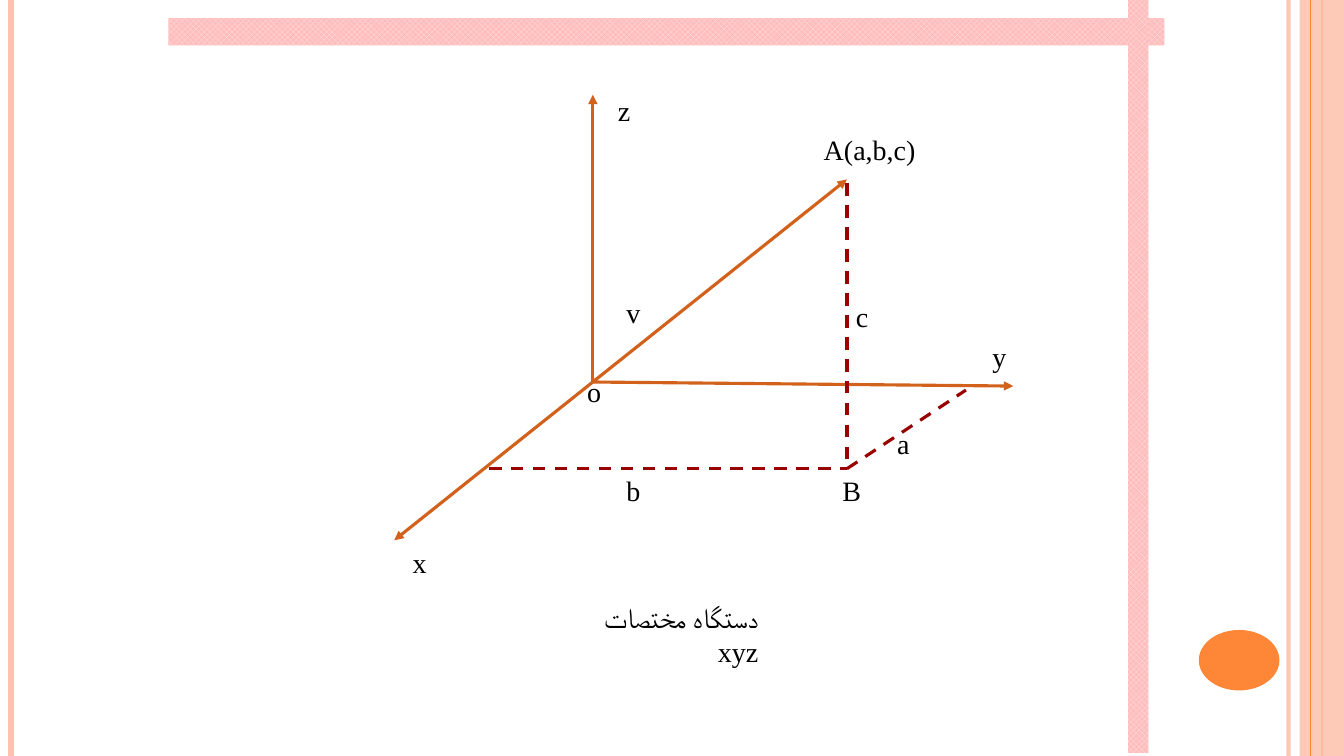
from lxml.etree import SubElement
from pptx import Presentation
from pptx.dml.color import RGBColor
from pptx.enum.dml import MSO_LINE, MSO_PATTERN
from pptx.enum.shapes import MSO_CONNECTOR, MSO_SHAPE
from pptx.enum.text import MSO_AUTO_SIZE, PP_ALIGN
from pptx.oxml.ns import qn
from pptx.util import Inches, Pt

PEACH = RGBColor(0xFE, 0xC3, 0xAE)
ORANGE = RGBColor(0xFE, 0x86, 0x37)
RUST = RGBColor(0xD2, 0x61, 0x1C)
MAROON = RGBColor(0x99, 0x00, 0x00)
BLACK = RGBColor(0, 0, 0)
PALE = RGBColor(0xFF, 0xE7, 0xE7)
PINK = RGBColor(0xFF, 0xBD, 0xBD)

WIDE, HIGH = 13.33, 7.5
ORIGIN = (5.88, 3.79)
POINT_A = (8.4, 1.78)
POINT_B = (8.4, 4.65)


def fade(fill, share):
    """Make a solid fill opaque to the given percentage."""
    color = next(fill.iter(qn("a:srgbClr")))
    SubElement(color, qn("a:alpha")).set("val", str(share * 1000))


class Canvas:
    """Style and current slide."""

    font = "Times New Roman"
    size = Pt(20)

    def __init__(self, slide):
        self.shapes = slide.shapes

    def line(self, start, end, color, width=2.25, dash=None, tips=(), share=100):
        """Draw a line; tips names its arrow ends, headEnd before tailEnd."""
        spots = [Inches(n) for n in (*start, *end)]
        link = self.shapes.add_connector(MSO_CONNECTOR.STRAIGHT, *spots)
        link.line.color.rgb = color
        link.line.width = Pt(width)
        if dash:
            link.line.dash_style = dash
        props = link._element.spPr
        edge = props.find(qn("a:ln"))
        for tip in tips:
            SubElement(edge, qn("a:" + tip)).set("type", "triangle")
        if share < 100:
            fade(edge, share)
        SubElement(props, qn("a:effectLst"))

    def shape(self, kind, box, color=None, share=100):
        """Draw a borderless shape, checked in pink when no color is given."""
        item = self.shapes.add_shape(kind, *[Inches(n) for n in box])
        item.shadow.inherit = False
        item.line.fill.background()
        if color is None:
            item.fill.patterned()
            item.fill.pattern = MSO_PATTERN.LARGE_CHECKER_BOARD
            item.fill.fore_color.rgb = PALE
            item.fill.back_color.rgb = PINK
        else:
            item.fill.solid()
            item.fill.fore_color.rgb = color
        if share < 100:
            fade(item._element.spPr, share)

    def text(self, words, left, top, width, wrap=False):
        """Write a right-to-left label."""
        box = self.shapes.add_textbox(
            Inches(left), Inches(top), Inches(width), Inches(0.43))
        frame = box.text_frame
        frame.word_wrap = wrap
        frame.auto_size = MSO_AUTO_SIZE.SHAPE_TO_FIT_TEXT
        para = frame.paragraphs[0]
        para.text = words
        para.alignment = PP_ALIGN.RIGHT
        para._p.get_or_add_pPr().set("rtl", "1")
        para.font.name = self.font
        para.font.size = self.size
        para.font.color.rgb = BLACK


def main():
    deck = Presentation()
    deck.slide_width, deck.slide_height = Inches(WIDE), Inches(HIGH)
    page = Canvas(deck.slides.add_slide(deck.slide_layouts[6]))

    def stripe(x, color, width, share=100):
        page.line((x, 0), (x, HIGH), color, width, share=share)

    stripe(12.78, PEACH, 3, share=93)
    stripe(0.11, PEACH, 4.5)
    stripe(13.11, ORANGE, 1.5)
    page.shape(MSO_SHAPE.RECTANGLE, (12.89, 0, 0.44, HIGH), PEACH, share=87)
    stripe(13, ORANGE, 0.75)
    page.shape(MSO_SHAPE.OVAL, (11.89, 6.25, 0.8, 0.6), ORANGE)

    for end in ((10.05, 3.83), (5.88, 0.94)):
        page.line(ORIGIN, end, RUST, tips=("tailEnd",))
    page.line(POINT_A, (3.91, 5.36), RUST, tips=("headEnd", "tailEnd"))

    for start, end in (((4.85, 4.65), POINT_B),
                       ((8.4, 1.82), POINT_B),
                       (POINT_B, (9.58, 3.87))):
        page.line(start, end, MAROON, dash=MSO_LINE.DASH)

    for label in (("x", 3.99, 5.36, 0.34),
                  ("z", 5.88, 0.88, 0.47),
                  ("o", 5.72, 3.67, 0.34),
                  ("y", 9.74, 3.32, 0.34),
                  ("b", 6.11, 4.65, 0.34),
                  ("B", 8.25, 4.65, 0.39),
                  ("a", 8.8, 4.18, 0.32),
                  ("c", 8.39, 2.92, 0.32),
                  ("v", 6.11, 2.88, 0.34),
                  ("A(a,b,c)", 8.07, 1.27, 1.11)):
        page.text(*label)
    page.text("دستگاه مختصات xyz", 5.45, 5.91, 2.17, wrap=True)

    for box in ((1.67, 0.18, 9.88, 0.27), (11.19, -0.03, 0.2, HIGH)):
        page.shape(MSO_SHAPE.RECTANGLE, box)

    deck.save("out.pptx")


if __name__ == "__main__":
    main()
